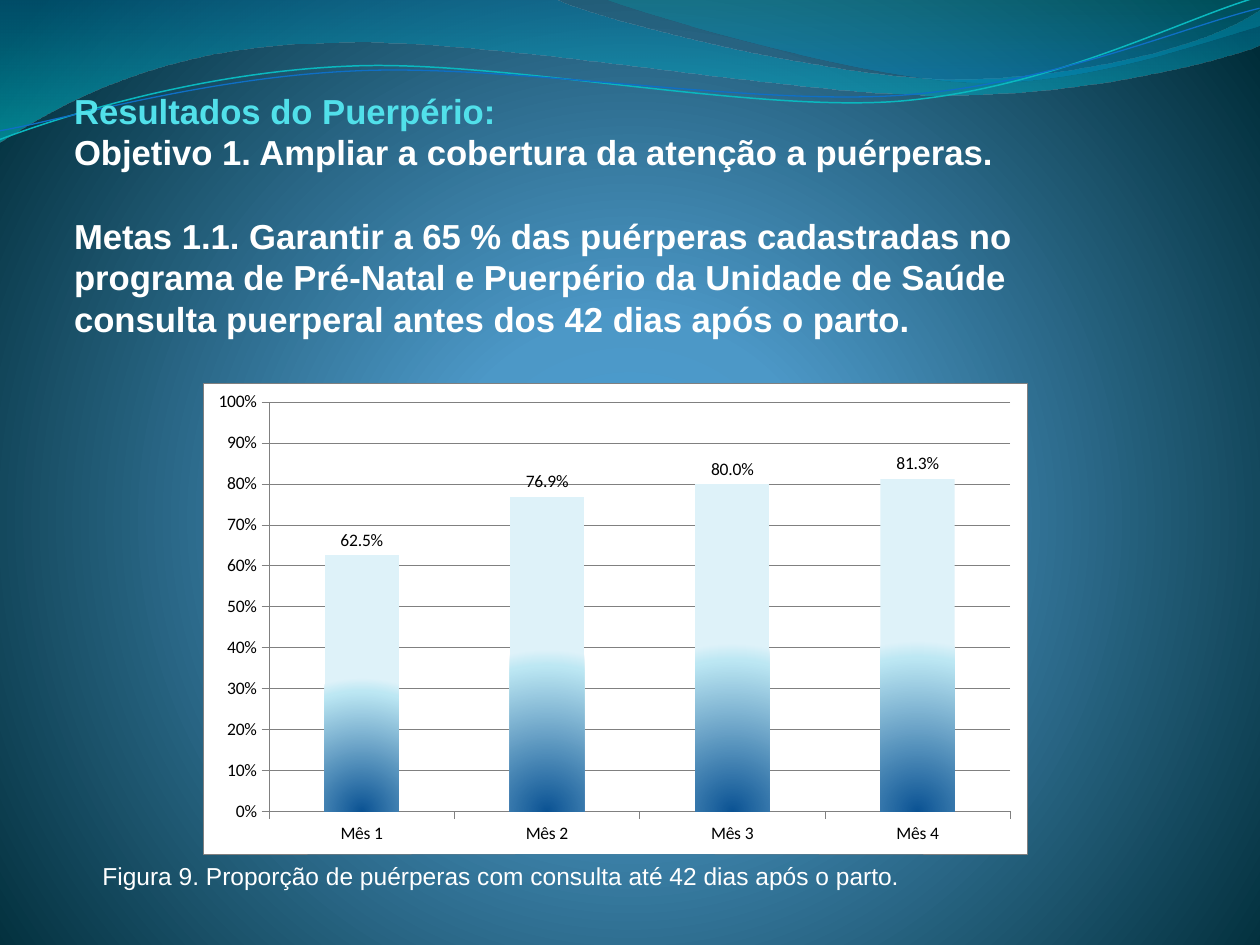
from dataclasses import dataclass
from typing import Any, Optional

import pptx
import pptx.chart.data
import pptx.enum.chart
import pptx.enum.text
import pptx.oxml
import pptx.oxml.ns
import pptx.util
from pptx.dml.color import RGBColor

EMU_PER_PX = 914400 / 126

WHITE = RGBColor(0xFF, 0xFF, 0xFF)
BLACK = RGBColor(0x00, 0x00, 0x00)
GRAY = RGBColor(0x80, 0x80, 0x80)
AQUA = RGBColor(0x51, 0xE0, 0xEA)
TEAL_LINE = RGBColor(0x0A, 0xB8, 0xBF)
BLUE_LINE = RGBColor(0x0F, 0x6F, 0xC6)
SKY = RGBColor(0x4A, 0xA0, 0xD6)
STEEL = RGBColor(0x4C, 0x98, 0xC7)
DEEP = RGBColor(0x00, 0x2C, 0x38)
OCEAN = RGBColor(0x00, 0x74, 0xA1)
CYAN = RGBColor(0x00, 0xC6, 0xCF)
SEA = RGBColor(0x00, 0xA1, 0xA9)
AZURE = RGBColor(0x00, 0x8B, 0xBF)
BAR_DARK = RGBColor(0x0B, 0x53, 0x94)
BAR_LIGHT = RGBColor(0xBC, 0xE7, 0xF3)
BAR_PALE = RGBColor(0xDE, 0xF2, 0xF9)

DOWNWARD = '<a:lin ang="5400000" scaled="1"/>'
NS = pptx.oxml.ns.nsdecls("a", "c")
Point = tuple[int, int]


@dataclass(frozen=True)
class Stop:
    percent: int
    color: RGBColor
    opacity: int = 100


@dataclass(frozen=True)
class Wave:
    """Segments hold one point for a straight line, three for a Bezier curve."""
    start: Point
    segments: tuple[tuple[Point, ...], ...]
    stops: tuple[Stop, ...] = ()
    line_color: Optional[RGBColor] = None
    line_width: float = 0
    rotation: float = 0


WAVES = (
    Wave((0, 0), (
        ((554, -1),),
        ((600, 21), (837, 79), (955, 79)),
        ((1075, 79), (1207, 47), (1260, 11)),
        ((1261, 45),),
        ((1239, 55), (1096, 96), (940, 95)),
        ((784, 95), (481, 35), (324, 43)),
        ((163, 45), (58, 105), (-1, 142)),
    ), (Stop(0, OCEAN, 45), Stop(100, CYAN, 55))),
    Wave((604, -1), (
        ((641, 14), (859, 78), (969, 82)),
        ((1079, 87), (1211, 40), (1260, 26)),
        ((1260, 0),),
    ), (Stop(0, SEA, 30), Stop(80, AZURE, 45))),
    Wave((-3, 110), (
        ((59, 90), (199, 52), (350, 53)),
        ((499, 53), (745, 118), (896, 114)),
        ((1049, 109), (1184, 45), (1260, 27)),
    ), line_color=TEAL_LINE, line_width=0.85, rotation=357.3),
    Wave((-2, 101), (
        ((57, 94), (207, 57), (357, 58)),
        ((509, 58), (750, 112), (902, 108)),
        ((1052, 104), (1188, 52), (1262, 38)),
    ), line_color=BLUE_LINE, line_width=0.75, rotation=357.3),
)


def px(length: float) -> pptx.util.Emu:
    return pptx.util.Emu(round(length * EMU_PER_PX))


def radial(left: int, top: int, right: int, bottom: int) -> str:
    """Circular gradient geometry; the focus insets are percentages."""
    return (f'<a:path path="circle"><a:fillToRect l="{left}000" t="{top}000" '
            f'r="{right}000" b="{bottom}000"/></a:path>')


def paint_gradient(fill: Any, owner: Any, stops: tuple[Stop, ...], geometry: str) -> None:
    """Give owner, the XML element that holds fill, a gradient."""
    fill.solid()
    solid = owner.find(".//" + pptx.oxml.ns.qn("a:solidFill"))
    colors = "".join(
        f'<a:gs pos="{stop.percent}000"><a:srgbClr val="{stop.color}">'
        f'<a:alpha val="{stop.opacity}000"/></a:srgbClr></a:gs>' for stop in stops)
    gradient = pptx.oxml.parse_xml(
        f'<a:gradFill {NS} rotWithShape="1"><a:gsLst>{colors}</a:gsLst>{geometry}</a:gradFill>')
    solid.getparent().replace(solid, gradient)


def bend(outline: Any, segments: tuple[tuple[Point, ...], ...]) -> None:
    """Turn the straight steps of every three-point segment into one Bezier curve."""
    steps = iter(outline.findall(".//" + pptx.oxml.ns.qn("a:lnTo")))
    for segment in segments:
        first, *others = [next(steps) for _ in segment]
        if others:
            curve = pptx.oxml.parse_xml(f"<a:cubicBezTo {NS}/>")
            first.addprevious(curve)
            for step in (first, *others):
                curve.append(step[0])
                step.getparent().remove(step)


def draw_wave(slide: Any, wave: Wave) -> None:
    builder = slide.shapes.build_freeform(px(wave.start[0]), px(wave.start[1]))
    builder.add_line_segments(
        [(px(x), px(y)) for segment in wave.segments for x, y in segment],
        close=bool(wave.stops))
    ribbon = builder.convert_to_shape()
    bend(ribbon.element, wave.segments)
    ribbon.rotation = wave.rotation
    ribbon.shadow.inherit = False
    if wave.stops:
        ribbon.line.fill.background()
        paint_gradient(ribbon.fill, ribbon.element, wave.stops, DOWNWARD)
    else:
        ribbon.fill.background()
        set_line(ribbon.line, wave.line_color, wave.line_width)


def set_line(line: Any, color: RGBColor, width: float) -> None:
    line.color.rgb = color
    line.width = pptx.util.Pt(width)


def place(placeholder: Any, box: tuple[int, int, int, int], top: int, right: int) -> Any:
    """Move a placeholder above the waves, set its insets and return its text frame."""
    placeholder.left, placeholder.top, placeholder.width, placeholder.height = map(px, box)
    placeholder.element.getparent().append(placeholder.element)
    frame = placeholder.text_frame
    frame.word_wrap = True
    frame.auto_size = pptx.enum.text.MSO_AUTO_SIZE.NONE
    frame.vertical_anchor = pptx.enum.text.MSO_ANCHOR.TOP
    frame.margin_left, frame.margin_bottom = 0, 0
    frame.margin_top, frame.margin_right = px(top), px(right)
    return frame


def write(frame: Any, text: str, *, size: float, color: RGBColor, bold: bool = False,
          align: Any = pptx.enum.text.PP_ALIGN.LEFT, leading: Optional[float] = None,
          before: float = 0) -> None:
    paragraph = frame.add_paragraph() if frame.text else frame.paragraphs[0]
    paragraph.alignment = align
    paragraph.space_before = pptx.util.Pt(before)
    if leading:
        paragraph.line_spacing = pptx.util.Pt(leading)
    run = paragraph.add_run()
    run.text = text
    run.font.name, run.font.size = "Arial", pptx.util.Pt(size)
    run.font.bold, run.font.color.rgb = bold, color


def draw_coverage_chart(slide: Any) -> None:
    data = pptx.chart.data.CategoryChartData(number_format="0.0%")
    data.categories = [f"Mês {month}" for month in range(1, 5)]
    data.add_series("Series 1", (0.625, 0.769, 0.8, 0.813))
    chart = slide.shapes.add_chart(
        pptx.enum.chart.XL_CHART_TYPE.COLUMN_CLUSTERED,
        px(203), px(383), px(824), px(471), data).chart
    chart.has_title = chart.has_legend = False
    chart.font.name, chart.font.size = "Calibri", pptx.util.Pt(10)
    chart.font.color.rgb = BLACK

    percent = chart.value_axis
    percent.minimum_scale, percent.maximum_scale, percent.major_unit = 0, 1, 0.1
    percent.tick_labels.number_format = "0%"
    percent.tick_labels.number_format_is_linked = False
    for axis in (percent, chart.category_axis):
        axis.major_tick_mark = pptx.enum.chart.XL_TICK_MARK.OUTSIDE
        set_line(axis.format.line, GRAY, 0.25)
    set_line(percent.major_gridlines.format.line, GRAY, 0.25)

    plot = chart.plots[0]
    plot.gap_width, plot.vary_by_categories = 150, False
    coverage = plot.series[0]
    paint_gradient(coverage.format.fill, coverage._element,
                   (Stop(0, BAR_DARK), Stop(90, BAR_LIGHT), Stop(100, BAR_PALE)),
                   radial(50, 100, 50, 0))
    labels = coverage.data_labels
    labels.show_value = True
    labels.number_format, labels.number_format_is_linked = "0.0%", False
    labels.position = pptx.enum.chart.XL_LABEL_POSITION.OUTSIDE_END

    white = f'<a:solidFill><a:srgbClr val="{WHITE}"/></a:solidFill>'
    border = f'<a:ln w="3175"><a:solidFill><a:srgbClr val="{GRAY}"/></a:solidFill></a:ln>'
    chart_node = chart._chartSpace.find(pptx.oxml.ns.qn("c:chart"))
    chart_node.addnext(pptx.oxml.parse_xml(f"<c:spPr {NS}>{white}{border}</c:spPr>"))
    area = chart_node.find(pptx.oxml.ns.qn("c:plotArea"))
    area.append(pptx.oxml.parse_xml(f"<c:spPr {NS}>{white}</c:spPr>"))
    for empty_layout in area.findall(pptx.oxml.ns.qn("c:layout")):
        area.remove(empty_layout)
    bounds = "".join(f'<c:{side} val="{share}"/>' for side, share in
                     (("x", 0.08), ("y", 0.04), ("w", 0.9), ("h", 0.87)))
    area.insert(0, pptx.oxml.parse_xml(
        f'<c:layout {NS}><c:manualLayout><c:layoutTarget val="inner"/><c:xMode val="edge"/>'
        f'<c:yMode val="edge"/>{bounds}</c:manualLayout></c:layout>'))


def main() -> None:
    deck = pptx.Presentation()
    deck.slide_width, deck.slide_height = px(1260), px(945)
    slide = deck.slides.add_slide(deck.slide_layouts[0])
    paint_gradient(slide.background.fill, slide.element,
                   (Stop(0, SKY), Stop(25, STEEL), Stop(100, DEEP)), radial(10, 110, 10, 100))
    for wave in WAVES:
        draw_wave(slide, wave)

    heading = place(slide.shapes.title, (74, 76, 1082, 377), top=14, right=3)
    style = dict(size=19.8, bold=True, leading=23.7)
    write(heading, "Resultados do Puerpério:", color=AQUA, **style)
    write(heading, "Objetivo 1. Ampliar a cobertura da atenção a puérperas.", color=WHITE, **style)
    write(heading, "Metas 1.1. Garantir a 65 % das puérperas cadastradas no programa de Pré-Natal "
          "e Puerpério da Unidade de Saúde consulta puerperal antes dos 42 dias após o parto.",
          color=WHITE, before=23.8, **style)

    caption = place(slide.placeholders[1], (-64, 854, 1082, 43), top=7, right=118)
    write(caption, "Figura 9. Proporção de puérperas com consulta até 42 dias após o parto.",
          size=14, color=WHITE, align=pptx.enum.text.PP_ALIGN.RIGHT)
    draw_coverage_chart(slide)
    deck.save("out.pptx")


if __name__ == "__main__":
    main()
